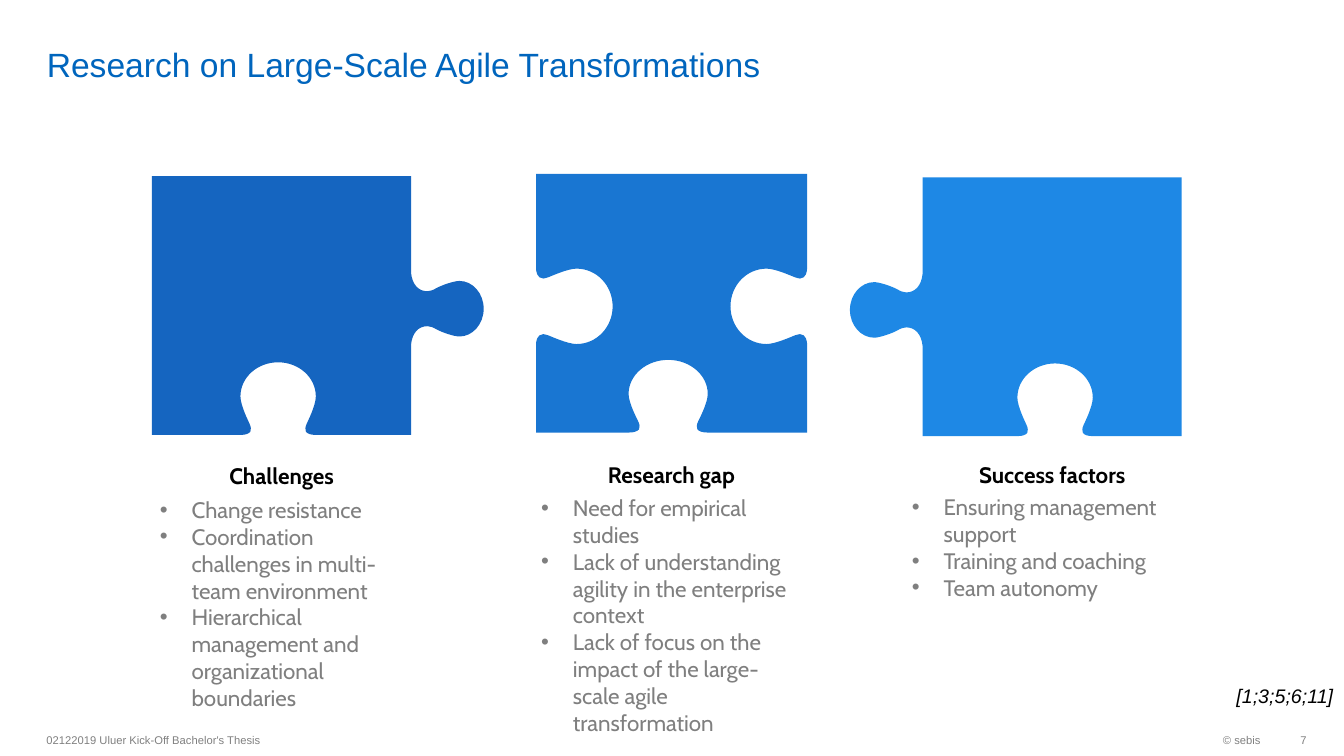
from lxml import etree
from pptx import Presentation
from pptx.dml.color import RGBColor
from pptx.enum.text import MSO_ANCHOR, PP_ALIGN
from pptx.oxml.ns import qn
from pptx.util import Cm, Pt

TOP, MIDDLE, BOTTOM = MSO_ANCHOR.TOP, MSO_ANCHOR.MIDDLE, MSO_ANCHOR.BOTTOM
LEFT, CENTER, RIGHT = PP_ALIGN.LEFT, PP_ALIGN.CENTER, PP_ALIGN.RIGHT

COLORS = {
    "title": "0065BD",
    "heading": "000000",
    "bullet": "7F7F7F",
    "footer": "808080",
    "challenges": "1565C0",
    "gap": "1976D2",
    "success": "1E88E5",
}

KNOB_CENTER = 3.34
TAB = [
    (-0.9, 0), (-0.62, 0.03), (-0.44, 0.18), (-0.44, 0.41),
    (-0.44, 0.48), (-0.47, 0.56), (-0.52, 0.64),
    (-0.6, 0.79), (-0.7, 1.09), (-0.7, 1.22),
    (-0.7, 1.55), (-0.39, 1.83), (0, 1.83),
]
SIDE_SOCKET = [
    (-0.95, 0), (-0.9, 0), (-0.7, -0.02), (-0.7, -0.18),
    (-0.7, -0.21), (-0.72, -0.25), (-0.73, -0.3),
    (-0.75, -0.36), (-0.95, -0.79), (-0.95, -1.02),
    (-0.95, -1.53), (-0.52, -1.93), (0, -1.93),
]
BOTTOM_SOCKET = [
    (-0.94, 0), (-0.82, 0), (-0.74, -0.03), (-0.7, -0.08),
    (-0.68, -0.13), (-0.68, -0.2), (-0.72, -0.28),
    (-0.74, -0.33), (-0.95, -0.74), (-0.95, -0.97),
    (-0.95, -1.45), (-0.52, -1.83), (0, -1.83),
]

COLUMNS = [
    {
        "piece": (3.83, 4.44, 6.53, 6.52), "color": "challenges",
        "left_edge": [], "right_edge": TAB, "socket": (3.18, 1),
        "heading": "Challenges", "heading_box": (3.81, 11.65, 6.58, 0.69),
        "list_box": (3.78, 12.37, 6.58, 6.4),
        "bullets": [
            "Change resistance",
            "Coordination challenges in multi-team environment",
            "Hierarchical management and organizational boundaries",
        ],
    },
    {
        "piece": (13.51, 4.38, 6.83, 6.52), "color": "gap",
        "left_edge": SIDE_SOCKET, "right_edge": SIDE_SOCKET,
        "socket": (3.33, 1.05),
        "heading": "Research gap", "heading_box": (13.4, 11.63, 7.04, 0.69),
        "list_box": (13.39, 12.32, 7.06, 6.4),
        "bullets": [
            "Need for empirical studies",
            "Lack of understanding agility in the enterprise context",
            "Lack of focus on the impact of the large-scale agile transformation",
        ],
    },
    {
        "piece": (23.25, 4.47, 6.53, 6.52), "color": "success",
        "left_edge": TAB, "right_edge": [], "socket": (3.34, 1),
        "heading": "Success factors", "heading_box": (22.99, 11.63, 7.06, 0.69),
        "list_box": (22.73, 12.3, 7.06, 4.37),
        "bullets": [
            "Ensuring management support",
            "Training and coaching",
            "Team autonomy",
        ],
    },
]


def knob(half, place):
    whole = half + [(-along, out) for along, out in reversed(half[:-1])]
    points = [place(along, out) for along, out in whole]
    return [points[:1]] + [points[i:i + 3] for i in range(1, len(points), 3)]


def bend_segments(piece, segments):
    lines = iter(list(piece._element.iter(qn("a:lnTo"))))
    for segment in segments:
        curve = next(lines)
        if len(segment) == 3:
            curve.tag = qn("a:cubicBezTo")
            for line in (next(lines), next(lines)):
                curve.append(line[0])
                line.getparent().remove(line)


def add_piece(slide, box, color, left_edge, right_edge, socket):
    left, top, width, height = box
    right, bottom = left + width, top + height
    middle = top + KNOB_CENTER
    socket_center, socket_scale = socket
    segments = [[(right, top)]]
    if right_edge:
        segments += knob(right_edge, lambda along, out: (right + out, middle + along))
    segments.append([(right, bottom)])
    segments += knob(BOTTOM_SOCKET, lambda along, out: (
        left + socket_center - along * socket_scale, bottom + out))
    segments.append([(left, bottom)])
    if left_edge:
        segments += knob(left_edge, lambda along, out: (left - out, middle - along))

    builder = slide.shapes.build_freeform(Cm(left), Cm(top))
    builder.add_line_segments(
        [(Cm(x), Cm(y)) for segment in segments for x, y in segment], close=True)
    piece = builder.convert_to_shape()
    bend_segments(piece, segments)
    piece.shadow.inherit = False
    piece.fill.solid()
    piece.fill.fore_color.rgb = RGBColor.from_string(COLORS[color])
    piece.line.fill.background()


def add_text(slide, box, lines, size, color, font="Arial", align=LEFT, anchor=TOP,
             bold=False, italic=False, wrap=True, bullet=False,
             insets=(0.25, 0.13, 0.25, 0.13)):
    frame = slide.shapes.add_textbox(*map(Cm, box)).text_frame
    frame.word_wrap = wrap
    frame.vertical_anchor = anchor
    (frame.margin_left, frame.margin_top,
     frame.margin_right, frame.margin_bottom) = map(Cm, insets)
    for index, line in enumerate(lines):
        paragraph = frame.paragraphs[0] if index == 0 else frame.add_paragraph()
        paragraph.text = line
        paragraph.alignment = align
        if bullet:
            properties = paragraph._p.get_or_add_pPr()
            properties.set("marL", str(Cm(0.8)))
            properties.set("indent", str(-Cm(0.8)))
            etree.SubElement(properties, qn("a:buFont")).set("typeface", "Arial")
            etree.SubElement(properties, qn("a:buChar")).set("char", "•")
        paragraph.font.name = font
        paragraph.font.size = Pt(size)
        paragraph.font.bold = bold
        paragraph.font.italic = italic
        paragraph.font.color.rgb = RGBColor.from_string(COLORS[color])


def add_column(slide, column):
    add_piece(slide, column["piece"], column["color"], column["left_edge"],
              column["right_edge"], column["socket"])
    add_text(slide, column["heading_box"], [column["heading"]], 16, "heading",
             font="Cabin", align=CENTER, bold=True, insets=(0, 0, 0, 0))
    add_text(slide, column["list_box"], column["bullets"], 16, "bullet",
             font="Cabin", bullet=True)


def add_footer(slide, box):
    left, top, width, height = box
    number_width, owner_width = 0.91, 5.94
    number_left = left + width - number_width
    add_text(slide, (left, top, 16, height),
             ["02122019 Uluer Kick-Off Bachelor's Thesis"], 8, "footer", anchor=MIDDLE)
    add_text(slide, (number_left - owner_width, top, owner_width, height),
             ["© sebis"], 8, "footer", align=RIGHT, anchor=MIDDLE)
    add_text(slide, (number_left, top, number_width, height), ["7"], 8, "footer",
             align=RIGHT, anchor=MIDDLE, insets=(0.25, 0.13, 0, 0.13))


def main():
    presentation = Presentation()
    presentation.slide_width, presentation.slide_height = Cm(33.87), Cm(19.05)
    slide = presentation.slides.add_slide(presentation.slide_layouts[6])
    add_text(slide, (0.93, 0.13, 29.41, 2), ["Research on Large-Scale Agile Transformations"],
             24, "title", anchor=BOTTOM, insets=(0.25, 0, 0.25, 0))
    for column in COLUMNS:
        add_column(slide, column)
    add_footer(slide, (0.92, 18.25, 32.01, 0.8))
    add_text(slide, (30.91, 17.11, 2.96, 0.86), ["[1;3;5;6;11]"], 14, "heading",
             italic=True, wrap=False)
    presentation.save("out.pptx")


if __name__ == "__main__":
    main()
